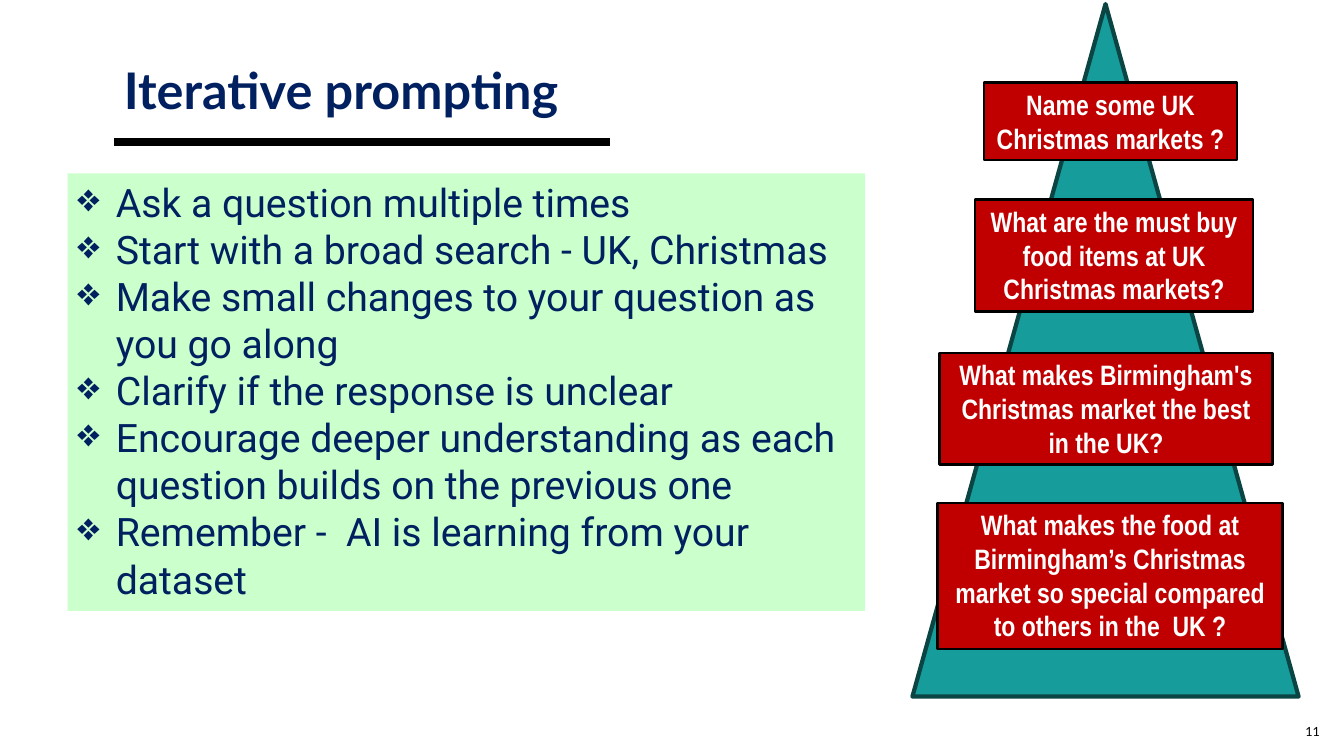
from dataclasses import dataclass

import pptx
import pptx.dml.color
import pptx.enum.shapes
import pptx.enum.text
import pptx.oxml.ns
import pptx.util
from lxml import etree

Inches = pptx.util.Inches
Pt = pptx.util.Pt
MSO_SHAPE = pptx.enum.shapes.MSO_SHAPE
PP_ALIGN = pptx.enum.text.PP_ALIGN
MSO_ANCHOR = pptx.enum.text.MSO_ANCHOR
qn = pptx.oxml.ns.qn


@dataclass(frozen=True)
class Theme:
    navy: str = "002060"
    black: str = "000000"
    white: str = "FFFFFF"
    mint: str = "99FF99"
    mint_opacity: int = 51
    tree: str = "169C9A"
    tree_edge: str = "0A4443"
    red: str = "C00000"
    heading_font: str = "Lato"
    body_font: str = "Roboto"
    label_font: str = "Arial Narrow"
    title_size: int = 36
    body_size: int = 28
    label_size: int = 20
    number_size: int = 9


THEME = Theme()

ADVICE = [
    "Ask a question multiple times",
    "Start with a broad search - UK, Christmas",
    "Make small changes to your question as you go along",
    "Clarify if the response is unclear",
    "Encourage deeper understanding as each question builds on the previous one",
    "Remember -  AI is learning from your dataset",
]

# Each prompt with its left, top, width and height relative to the tree.
PROMPTS = [
    ("Name some UK Christmas markets ?", (0.71, 0.78, 2.51, 0.77)),
    ("What are the must buy food items at UK Christmas markets?",
     (0.62, 1.94, 2.76, 1.11)),
    ("What makes Birmingham's Christmas market the best in the UK?",
     (0.27, 3.46, 3.3, 1.11)),
    ("What makes the food at Birmingham’s Christmas market so special "
     "compared to others in the  UK ?", (0.25, 4.95, 3.42, 1.45)),
]


def rgb(value):
    return pptx.dml.color.RGBColor.from_string(value)


def style(paragraph, font_name, size, color, bold=False, align=PP_ALIGN.LEFT):
    paragraph.alignment = align
    font = paragraph.font
    font.name, font.size, font.bold = font_name, Pt(size), bold
    font.color.rgb = rgb(color)


def add_text_box(slide, box, text, anchor):
    """Add a one-paragraph text box and return its paragraph."""
    frame = slide.shapes.add_textbox(*map(Inches, box)).text_frame
    frame.word_wrap = True
    frame.vertical_anchor = anchor
    frame.text = text
    return frame.paragraphs[0]


def add_filled_shape(slide, kind, box, fill, edge=None, edge_width=0):
    shape = slide.shapes.add_shape(kind, *map(Inches, box))
    shape.shadow.inherit = False
    shape.fill.solid()
    shape.fill.fore_color.rgb = rgb(fill)
    if edge:
        shape.line.color.rgb = rgb(edge)
        shape.line.width = Pt(edge_width)
    else:
        shape.line.fill.background()
    shape.text_frame.word_wrap = True
    shape.text_frame.vertical_anchor = MSO_ANCHOR.TOP
    return shape


def add_diamond_bullet(paragraph, indent):
    properties = paragraph._p.get_or_add_pPr()
    properties.set("marL", str(Inches(indent)))
    properties.set("indent", str(-Inches(indent)))
    etree.SubElement(properties, qn("a:buChar")).set("char", "❖")


def add_heading(slide, box):
    """Place the title at the top of the box and the rule along its bottom."""
    left, top, width, height = box
    title = add_text_box(slide, (left, top, width, 0.71),
                         "Iterative prompting", MSO_ANCHOR.TOP)
    style(title, THEME.heading_font, THEME.title_size, THEME.navy, bold=True)
    title.line_spacing = 0.9

    bottom = Inches(top + height)
    rule = slide.shapes.add_connector(
        pptx.enum.shapes.MSO_CONNECTOR.STRAIGHT,
        Inches(left), bottom, Inches(left + 4.92), bottom)
    rule.line.color.rgb = rgb(THEME.black)
    rule.line.width = Pt(6)
    etree.SubElement(rule._element.spPr, qn("a:effectLst"))


def add_advice(slide, box):
    panel = add_filled_shape(slide, MSO_SHAPE.RECTANGLE, box, THEME.mint)
    mint = panel._element.spPr.find(qn("a:solidFill"))[0]
    etree.SubElement(mint, qn("a:alpha")).set(
        "val", str(THEME.mint_opacity * 1000))
    frame = panel.text_frame
    frame.text = "\n".join(ADVICE)
    for tip in frame.paragraphs:
        style(tip, THEME.body_font, THEME.body_size, THEME.navy)
        add_diamond_bullet(tip, 0.38)


def add_prompt_tree(slide, box):
    add_filled_shape(slide, MSO_SHAPE.ISOSCELES_TRIANGLE, box,
                     THEME.tree, THEME.tree_edge, 3)
    left, top = box[:2]
    for prompt, (dx, dy, width, height) in PROMPTS:
        label = add_filled_shape(
            slide, MSO_SHAPE.RECTANGLE, (left + dx, top + dy, width, height),
            THEME.red, THEME.black, 1.75)
        label.text_frame.text = prompt
        style(label.text_frame.paragraphs[0], THEME.label_font,
              THEME.label_size, THEME.white, bold=True, align=PP_ALIGN.CENTER)


def add_page_number(slide, box):
    number = add_text_box(slide, box, "11", MSO_ANCHOR.MIDDLE)
    style(number, THEME.heading_font, THEME.number_size, THEME.black,
          align=PP_ALIGN.RIGHT)


def main():
    deck = pptx.Presentation()
    deck.slide_width, deck.slide_height = Inches(13.33), Inches(7.5)
    slide = deck.slides.add_slide(deck.slide_layouts[6])
    add_page_number(slide, (12.72, 7.06, 0.47, 0.4))
    add_heading(slide, (1.13, 0.61, 5.21, 0.8))
    add_advice(slide, (0.67, 1.72, 7.91, 4.34))
    add_prompt_tree(slide, (9.05, 0.04, 3.83, 6.87))
    deck.save("out.pptx")


if __name__ == "__main__":
    main()
